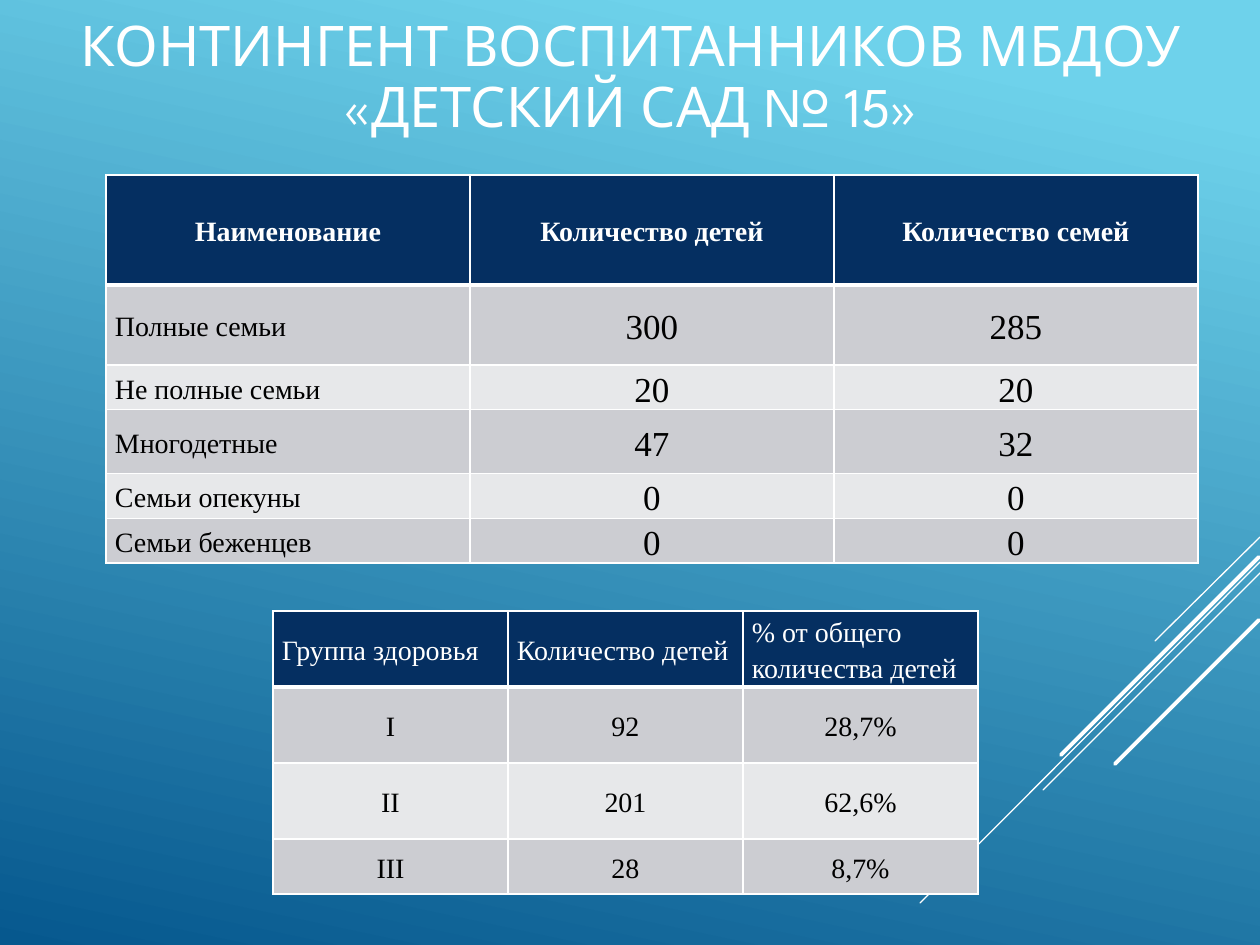
"""Build the slide on the kindergarten's families and health groups."""
from dataclasses import dataclass

from lxml.etree import SubElement
from pptx import Presentation
from pptx.dml.color import RGBColor as Rgb
from pptx.enum.shapes import MSO_CONNECTOR as Conn
from pptx.enum.text import MSO_ANCHOR as Anchor, MSO_AUTO_SIZE as Fit, PP_ALIGN as Align
from pptx.oxml.ns import qn
from pptx.slide import Slide
from pptx.table import _Cell as Cell
from pptx.text.text import _Paragraph as Para
from pptx.util import Emu, Pt


@dataclass(frozen=True)
class Theme:
    white: str = "FFFFFF"
    black: str = "000000"
    navy: str = "052F61"
    bands: tuple[str, str] = ("CCCDD2", "E7E8EA")
    sky: tuple[str, str] = ("6ED2EB", "06588E")
    head: str = "League Spartan"
    body: str = "Times New Roman"
    title: int = 32
    text: int = 16
    count: int = 20
    thin: float = 0.75
    thick: float = 2.25
    rule: int = 1
    bar: int = 3


@dataclass(frozen=True)
class Ray:
    x1: int
    y1: int
    x2: int
    y2: int
    width: float


@dataclass(frozen=True)
class Grid:
    left: int
    top: int
    col: int
    heights: list[int]
    rows: list[list[str]]
    bold: bool
    size: int
    head: Align
    first: Align


THEME = Theme()

RAYS = [
    Ray(1260, 537, 1155, 641, THEME.thin),
    Ray(1260, 562, 920, 903, THEME.thin),
    Ray(1260, 573, 1043, 790, THEME.thin),
    Ray(1259, 557, 1061, 755, THEME.thick),
    Ray(1259, 620, 1115, 764, THEME.thick),
]

GRIDS = [
    Grid(106, 175, 364, [110, 80, 42, 64, 42, 42], [
        ["Наименование", "Количество детей", "Количество семей"],
        ["Полные семьи", "300", "285"],
        ["Не полные семьи", "20", "20"],
        ["Многодетные", "47", "32"],
        ["Семьи опекуны", "0", "0"],
        ["Семьи беженцев", "0", "0"],
    ], True, THEME.count, Align.CENTER, Align.LEFT),
    Grid(273, 611, 235, [76, 76, 76, 55], [
        ["Группа здоровья", "Количество детей", "% от общего количества детей"],
        ["I", "92", "28,7%"],
        ["II", "201", "62,6%"],
        ["III", "28", "8,7%"],
    ], False, THEME.text, Align.LEFT, Align.CENTER),
]


def px(n: int) -> Emu:
    """Turn pixels into EMU."""
    return Emu(round(n * 914400 / 126))


def style(para: Para, face: str, size: int, color: str, bold: bool = False) -> None:
    """Format every run of a paragraph."""
    for run in para.runs:
        font = run.font
        font.name, font.size, font.bold = face, Pt(size), bold
        font.color.rgb = Rgb.from_string(color)


def paint(slide: Slide) -> None:
    """Fill the background with the sky gradient."""
    fill = slide.background.fill
    fill.gradient()
    fill.gradient_angle = 360 - 102
    for stop, color, pos in zip(fill.gradient_stops, THEME.sky, (0.1, 1)):
        stop.color.rgb = Rgb.from_string(color)
        stop.position = pos


def draw_ray(slide: Slide, ray: Ray) -> None:
    """Draw one slanted line."""
    line = slide.shapes.add_connector(
        Conn.STRAIGHT, px(ray.x1), px(ray.y1), px(ray.x2), px(ray.y2))
    line.line.color.rgb = Rgb.from_string(THEME.white)
    line.line.width = Pt(ray.width)
    props = line._element.spPr
    props.find(qn("a:ln")).set("cap", "rnd")
    SubElement(props, qn("a:effectLst"))


def edge(cell: Cell, row: int) -> None:
    """Give a cell white borders, heavy below the header."""
    props = cell._tc.get_or_add_tcPr()
    heavy = {(0, "B"), (1, "T")}
    for side in "LRTB":
        width = THEME.bar if (row, side) in heavy else THEME.rule
        line = SubElement(props, qn(f"a:ln{side}"), w=str(Pt(width)))
        fill = SubElement(line, qn("a:solidFill"))
        SubElement(fill, qn("a:srgbClr"), val=THEME.white)


def draw_cell(cell: Cell, grid: Grid, row: int, col: int) -> None:
    """Write and format one table cell."""
    head = row == 0
    edge(cell, row)
    cell.fill.solid()
    shade = THEME.navy if head else THEME.bands[(row - 1) % 2]
    cell.fill.fore_color.rgb = Rgb.from_string(shade)
    cell.vertical_anchor = Anchor.MIDDLE
    cell.margin_left = cell.margin_right = px(9)
    cell.margin_top = cell.margin_bottom = 0
    cell.text_frame.text = grid.rows[row][col]
    para = cell.text_frame.paragraphs[0]
    para.line_spacing, para.space_after = 1.15, Pt(10)
    para.alignment = grid.head if head else Align.CENTER if col else grid.first
    size = grid.size if row and col else THEME.text
    style(para, THEME.body, size, THEME.white if head else THEME.black, head and grid.bold)


def draw_grid(slide: Slide, grid: Grid) -> None:
    """Draw one table."""
    count = len(grid.rows[0])
    table = slide.shapes.add_table(
        len(grid.rows), count, px(grid.left), px(grid.top),
        px(grid.col * count), px(sum(grid.heights))).table
    for col in table.columns:
        col.width = px(grid.col)
    for row, high in enumerate(grid.heights):
        table.rows[row].height = px(high)
        for col in range(count):
            draw_cell(table.cell(row, col), grid, row, col)


def draw_title(slide: Slide) -> None:
    """Place and format the title."""
    title = slide.shapes.title
    title.left, title.top, title.width, title.height = px(64), px(0), px(1134), px(158)
    frame = title.text_frame
    frame.text = "КОНТИНГЕНТ ВОСПИТАННИКОВ МБДОУ «ДЕТСКИЙ САД № 15»"
    frame.word_wrap, frame.auto_size = True, Fit.NONE
    frame.vertical_anchor = Anchor.MIDDLE
    para = frame.paragraphs[0]
    para.alignment, para.line_spacing = Align.CENTER, 0.9
    style(para, THEME.head, THEME.title, THEME.white)


def main() -> None:
    """Build and save the deck."""
    deck = Presentation()
    deck.slide_width, deck.slide_height = px(1260), px(945)
    slide = deck.slides.add_slide(deck.slide_layouts[5])
    paint(slide)
    draw_title(slide)
    for ray in RAYS:
        draw_ray(slide, ray)
    for grid in GRIDS:
        draw_grid(slide, grid)
    deck.save("out.pptx")


if __name__ == "__main__":
    main()
